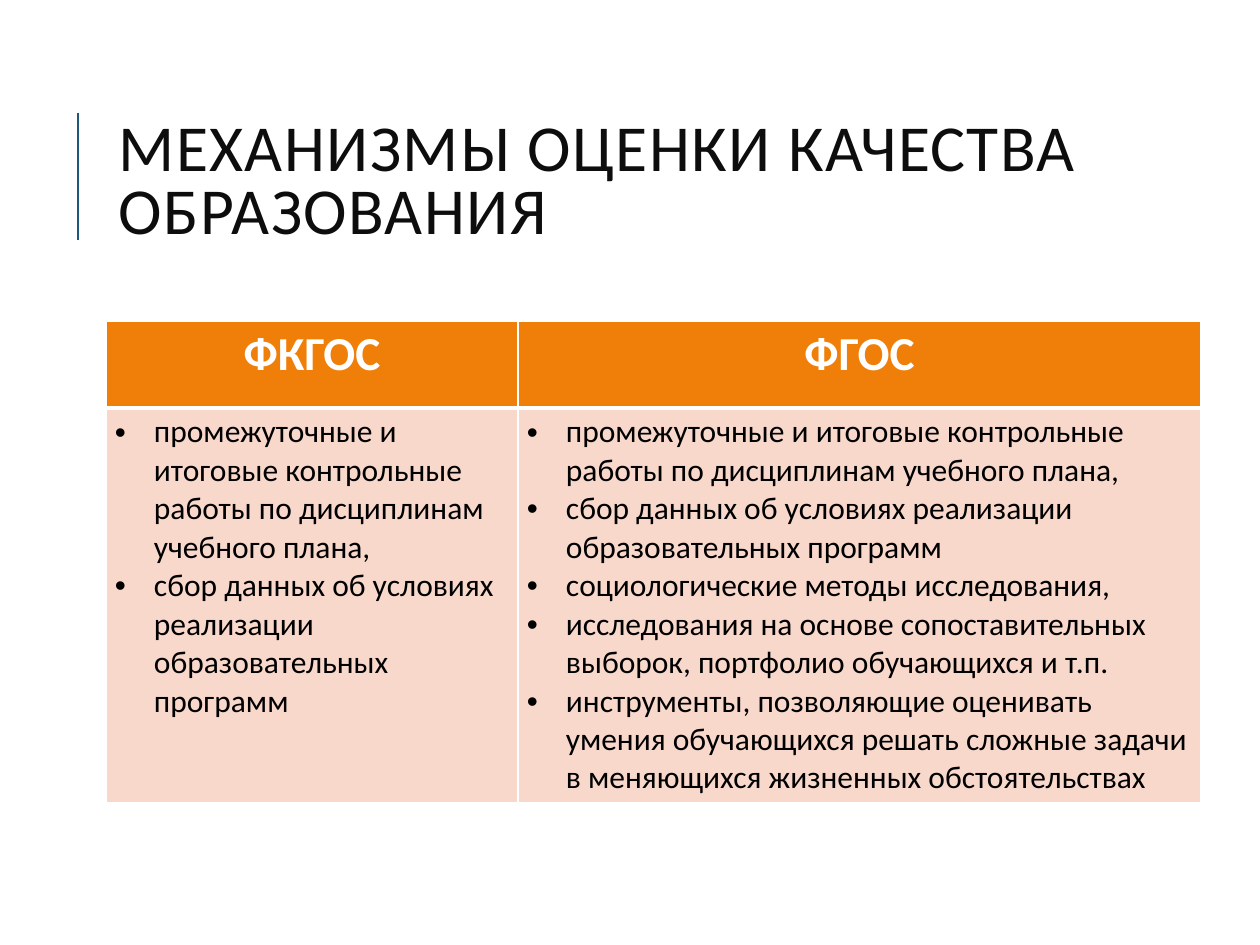
"""Build a slide comparing education quality assessment under two standards."""
from lxml import etree
from pptx import Presentation
from pptx import util as u
from pptx.dml.color import RGBColor
from pptx.enum import shapes, text
from pptx.oxml import ns

TITLE = "МЕХАНИЗМЫ ОЦЕНКИ КАЧЕСТВА ОБРАЗОВАНИЯ"
SHARED = [
    "промежуточные и итоговые контрольные работы по дисциплинам учебного плана,",
    "сбор данных об условиях реализации образовательных программ",
]
STANDARDS = [
    ("ФКГОС", SHARED),
    ("ФГОС", SHARED + [
        "социологические методы исследования,",
        "исследования на основе сопоставительных выборок, портфолио обучающихся и т.п.",
        "инструменты, позволяющие оценивать умения обучающихся решать сложные задачи "
        "в меняющихся жизненных обстоятельствах",
    ]),
]
THEME = {
    "font": "Calibri",
    "ink": "0D0D0D", "body": "000000", "white": "FFFFFF",
    "accent": "1B587C", "head_fill": "F07F09", "body_fill": "F9D8CC",
    "title_size": 37.5, "head_size": 27, "body_size": 18,
}
SLIDE = (1260, 945)
RULE = (78, 240, 78, 113)
TITLE_BOX = (106, 81, 1004, 207)
TABLE_AT = (106, 321)
COLUMNS = (412, 683)
ROWS = (87, 388)
CELL_INSET = (9, 5)
BULLET_INDENT = 39


def px(count):
    return u.Emu(round(count * 914400 / 126))


def color(name):
    return RGBColor.from_string(THEME[name])


def add_span(para, words, size, ink, bold=False):
    span = para.add_run()
    span.text = words
    span.font.name = THEME["font"]
    span.font.size = u.Pt(THEME[size])
    span.font.color.rgb = color(ink)
    span.font.bold = bold
    return span


def add_title(page):
    box = page.shapes.title
    box.left, box.top, box.width, box.height = map(px, TITLE_BOX)
    frame = box.text_frame
    frame.word_wrap = True
    frame.auto_size = text.MSO_AUTO_SIZE.NONE
    frame.vertical_anchor = text.MSO_ANCHOR.MIDDLE
    para = frame.paragraphs[0]
    para.alignment = text.PP_ALIGN.LEFT
    para.line_spacing = 0.8
    span = add_span(para, TITLE, "title_size", "ink")
    span.font._element.set("spc", "80")


def add_rule(page):
    rule = page.shapes.add_connector(shapes.MSO_CONNECTOR.STRAIGHT, *map(px, RULE))
    rule.line.color.rgb = color("accent")
    rule.line.width = u.Pt(1.5)
    etree.SubElement(rule._element.spPr, ns.qn("a:effectLst"))


def add_bullet(para):
    props = para._p.get_or_add_pPr()
    props.set("marL", str(px(BULLET_INDENT)))
    props.set("indent", str(-px(BULLET_INDENT)))
    etree.SubElement(props, ns.qn("a:buFont"), typeface="Arial")
    etree.SubElement(props, ns.qn("a:buChar"), char="•")


def style_cell(cell, fill, bottom_width):
    cell.margin_left = cell.margin_right = px(CELL_INSET[0])
    cell.margin_top = cell.margin_bottom = px(CELL_INSET[1])
    cell.fill.solid()
    cell.fill.fore_color.rgb = color(fill)
    props = cell._tc.get_or_add_tcPr()
    widths = {"lnL": 1, "lnR": 1, "lnT": 1, "lnB": bottom_width}
    for place, (side, width) in enumerate(widths.items()):
        border = etree.Element(ns.qn(f"a:{side}"), w=str(u.Pt(width)))
        paint = etree.SubElement(border, ns.qn("a:solidFill"))
        etree.SubElement(paint, ns.qn("a:srgbClr"), val=THEME["white"])
        props.insert(place, border)


def add_standards(page):
    size = (sum(COLUMNS), sum(ROWS))
    frame = page.shapes.add_table(len(ROWS), len(COLUMNS), *map(px, TABLE_AT + size))
    table = frame.table
    for row, height in zip(table.rows, ROWS):
        row.height = px(height)
    for index, (name, methods) in enumerate(STANDARDS):
        table.columns[index].width = px(COLUMNS[index])
        head, body = table.cell(0, index), table.cell(1, index)
        style_cell(head, "head_fill", 3)
        para = head.text_frame.paragraphs[0]
        para.alignment = text.PP_ALIGN.CENTER
        add_span(para, name, "head_size", "white", True)
        style_cell(body, "body_fill", 1)
        for order, method in enumerate(methods):
            lines = body.text_frame
            para = lines.add_paragraph() if order else lines.paragraphs[0]
            add_bullet(para)
            add_span(para, method, "body_size", "body")


def main():
    deck = Presentation()
    deck.slide_width, deck.slide_height = map(px, SLIDE)
    page = deck.slides.add_slide(deck.slide_layouts.get_by_name("Title Only"))
    add_rule(page)
    add_title(page)
    add_standards(page)
    deck.save("out.pptx")


if __name__ == "__main__":
    main()
